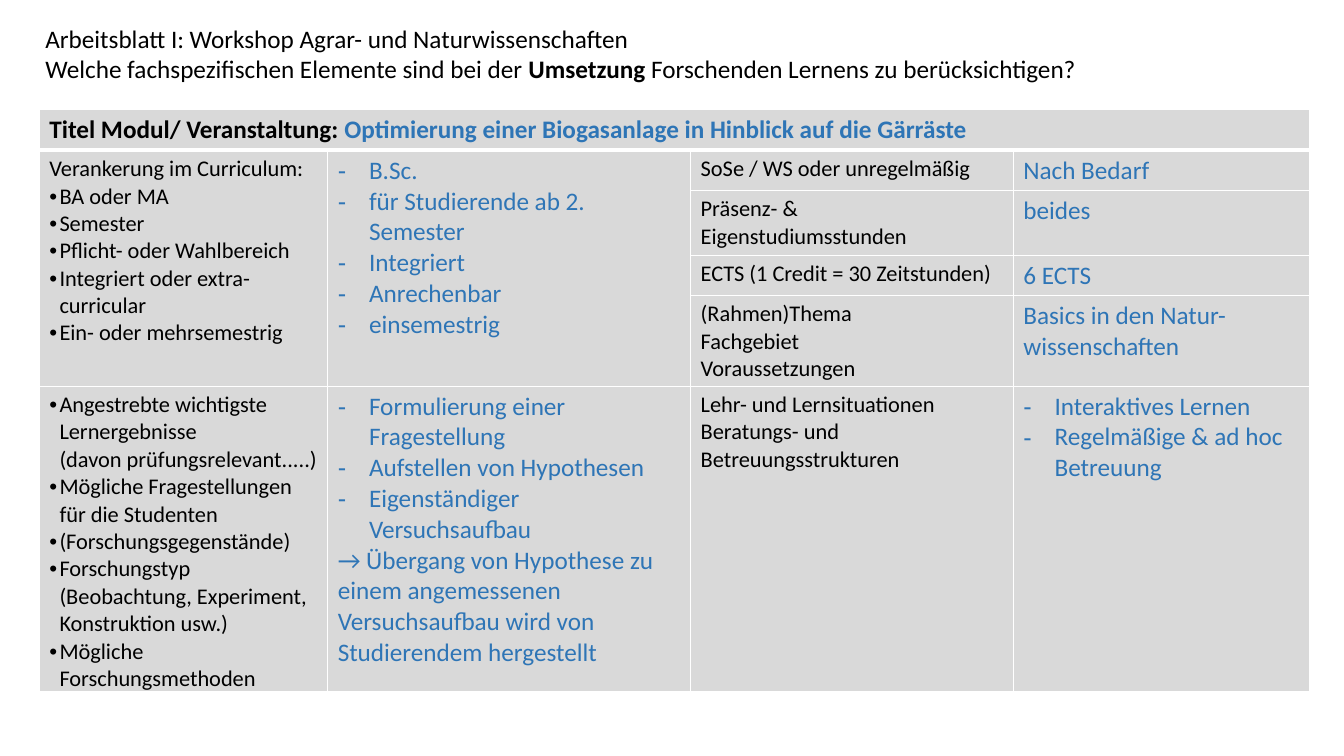
from lxml import etree
from pptx import Presentation
from pptx.dml.color import RGBColor
from pptx.enum import text
from pptx.oxml import ns
from pptx.util import Inches, Pt

BLACK = RGBColor(0x00, 0x00, 0x00)
BLUE = RGBColor(0x2E, 0x75, 0xB6)
GREY = RGBColor(0xD9, 0xD9, 0xD9)
FONT = "Calibri"

COLUMN_WIDTHS = (2.86, 3.6, 3.2, 2.94)
ROW_HEIGHTS = (0.4, 0.4, 0.64, 0.4, 0.9, 3.03)
INDENTS = {"•": 0.1, "-": 0.31}

# (row, column): paragraphs; a leading "• " or "- " marks a list item
CONTENT = {
    (1, 0): ["Verankerung im Curriculum:", "• BA oder MA", "• Semester",
             "• Pflicht- oder Wahlbereich", "• Integriert oder extra-curricular",
             "• Ein- oder mehrsemestrig"],
    (1, 1): ["- B.Sc.", "- für Studierende ab 2. Semester", "- Integriert",
             "- Anrechenbar", "- einsemestrig"],
    (1, 2): ["SoSe / WS oder unregelmäßig"],
    (1, 3): ["Nach Bedarf"],
    (2, 2): ["Präsenz- & Eigenstudiumsstunden"],
    (2, 3): ["beides"],
    (3, 2): ["ECTS (1 Credit = 30 Zeitstunden)"],
    (3, 3): ["6 ECTS"],
    (4, 2): ["(Rahmen)Thema", "Fachgebiet", "Voraussetzungen"],
    (4, 3): ["Basics in den Natur-wissenschaften"],
    (5, 0): ["• Angestrebte wichtigste Lernergebnisse \n(davon prüfungsrelevant.....)",
             "• Mögliche Fragestellungen für die Studenten",
             "• (Forschungsgegenstände)",
             "• Forschungstyp (Beobachtung, Experiment, Konstruktion usw.)",
             "• Mögliche Forschungsmethoden"],
    (5, 1): ["- Formulierung einer Fragestellung", "- Aufstellen von Hypothesen",
             "- Eigenständiger Versuchsaufbau",
             "→ Übergang von Hypothese zu einem angemessenen Versuchsaufbau "
             "wird von Studierendem hergestellt"],
    (5, 2): ["Lehr- und Lernsituationen", "Beratungs- und Betreuungsstrukturen"],
    (5, 3): ["- Interaktives Lernen", "- Regelmäßige & ad hoc Betreuung"],
}


def add_run(paragraph, words, size, color, bold=False):
    for index, line in enumerate(words.split("\n")):
        if index:
            paragraph.add_line_break()
        run = paragraph.add_run()
        run.text = line
        run.font.name = FONT
        run.font.size = Pt(size)
        run.font.bold = bold
        run.font.color.rgb = color


def add_bullet(paragraph, character):
    indent = Inches(INDENTS[character])
    properties = paragraph._p.get_or_add_pPr()
    properties.set("marL", str(indent))
    properties.set("indent", str(-indent))
    etree.SubElement(properties, ns.qn("a:buFont"), typeface="Arial")
    etree.SubElement(properties, ns.qn("a:buChar"), char=character)


def fill_cell(cell, lines, size, color):
    frame = cell.text_frame
    for index, line in enumerate(lines):
        paragraph = frame.add_paragraph() if index else frame.paragraphs[0]
        marker, _, words = line.partition(" ")
        if marker in INDENTS:
            add_bullet(paragraph, marker)
            line = words
        add_run(paragraph, line, size, color)


def format_cell(cell, top, bottom):
    """Grey fill and white borders; top and bottom are line widths in points."""
    cell.fill.solid()
    cell.fill.fore_color.rgb = GREY
    properties = cell._tc.get_or_add_tcPr()
    for index, (side, width) in enumerate(
            (("lnL", 1), ("lnR", 1), ("lnT", top), ("lnB", bottom))):
        line = etree.Element(ns.qn(f"a:{side}"), w=str(Pt(width)))
        solid = etree.SubElement(line, ns.qn("a:solidFill"))
        etree.SubElement(solid, ns.qn("a:srgbClr"), val="FFFFFF")
        properties.insert(index, line)


def add_title(slide):
    title = slide.shapes.title
    title.left, title.top = Inches(0.35), Inches(0.18)
    title.width, title.height = Inches(12.64), Inches(0.71)
    frame = title.text_frame
    frame.word_wrap = True
    frame.auto_size = text.MSO_AUTO_SIZE.SHAPE_TO_FIT_TEXT
    frame.vertical_anchor = text.MSO_ANCHOR.TOP
    first, second = frame.paragraphs[0], frame.add_paragraph()
    for paragraph in (first, second):
        paragraph.alignment = text.PP_ALIGN.LEFT
    add_run(first, "Arbeitsblatt I: Workshop Agrar- und Naturwissenschaften", 18, BLACK)
    add_run(second, "Welche fachspezifischen Elemente sind bei der ", 18, BLACK)
    add_run(second, "Umsetzung", 18, BLACK, bold=True)
    add_run(second, " Forschenden Lernens zu berücksichtigen?", 18, BLACK)


def add_module_table(slide):
    table = slide.shapes.add_table(
        len(ROW_HEIGHTS), len(COLUMN_WIDTHS), Inches(0.39), Inches(1.09),
        Inches(sum(COLUMN_WIDTHS)), Inches(sum(ROW_HEIGHTS))).table
    table.first_row = table.horz_banding = False
    for column, width in zip(table.columns, COLUMN_WIDTHS):
        column.width = Inches(width)
    for row_index, (row, height) in enumerate(zip(table.rows, ROW_HEIGHTS)):
        row.height = Inches(height)
        for cell in row.cells:
            format_cell(cell, top=3 if row_index == 1 else 1,
                        bottom=3 if row_index == 0 else 1)
    for cell in table.rows[len(ROW_HEIGHTS) - 1].cells:
        cell.margin_bottom = 0

    table.cell(0, 0).merge(table.cell(0, 3))
    for column_index in (0, 1):
        table.cell(1, column_index).merge(table.cell(4, column_index))

    heading = table.cell(0, 0).text_frame.paragraphs[0]
    add_run(heading, "Titel Modul/ Veranstaltung: ", 18, BLACK, bold=True)
    add_run(heading, "Optimierung einer Biogasanlage in Hinblick auf die Gärräste",
            18, BLUE, bold=True)
    for (row_index, column_index), lines in CONTENT.items():
        is_answer = column_index % 2 == 1
        fill_cell(table.cell(row_index, column_index), lines,
                  18 if is_answer else 16, BLUE if is_answer else BLACK)


def main():
    presentation = Presentation()
    presentation.slide_width = Inches(13.33)
    presentation.slide_height = Inches(7.5)
    slide = presentation.slides.add_slide(presentation.slide_layouts[5])
    add_title(slide)
    add_module_table(slide)
    presentation.save("out.pptx")


if __name__ == "__main__":
    main()
